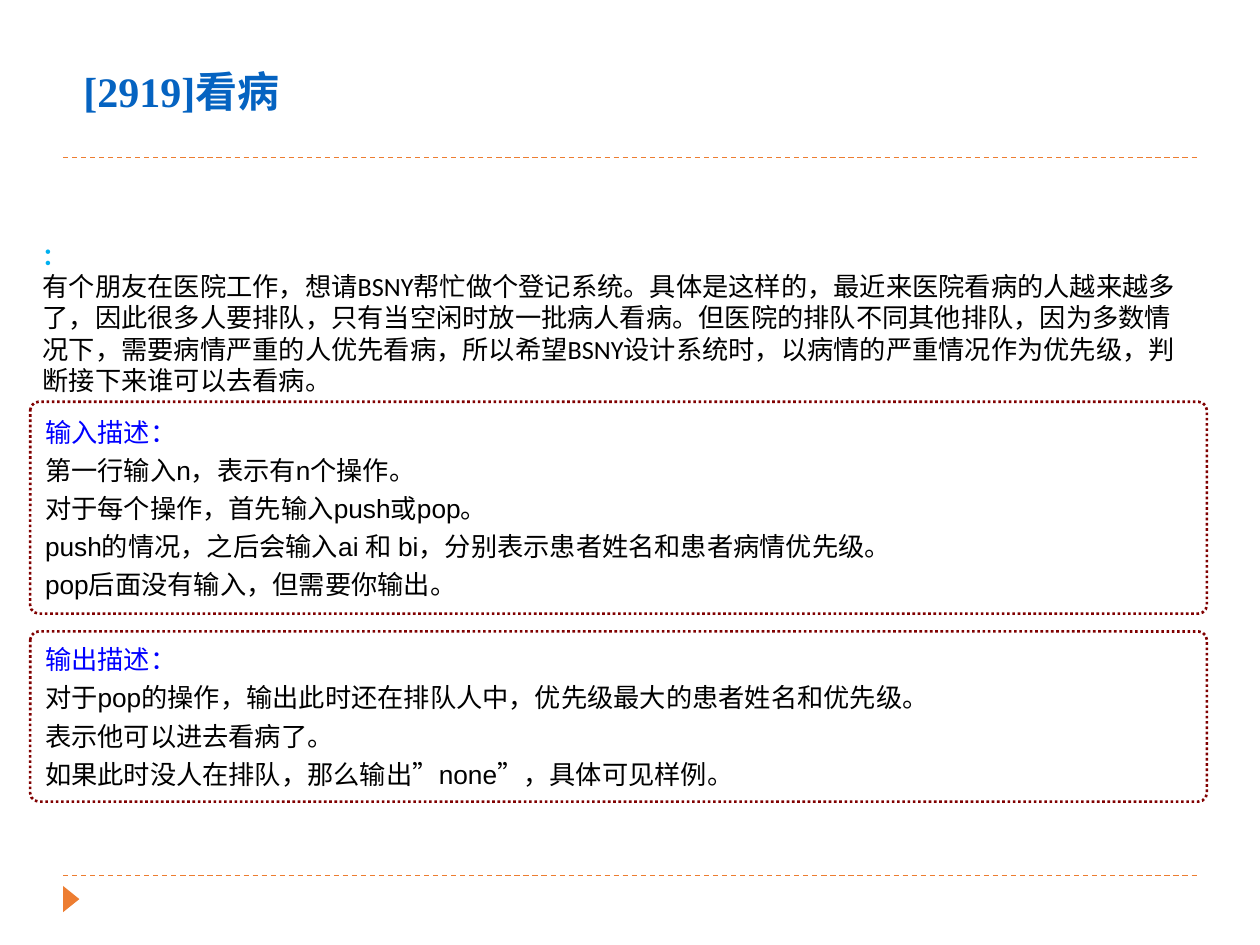
from dataclasses import dataclass

from lxml import etree
from pptx import Presentation
from pptx.dml.color import RGBColor
from pptx.enum import dml, shapes, text
from pptx.oxml import ns
from pptx.util import Cm, Pt


@dataclass(frozen=True)
class Theme:
    accent: str = "ED7D31"
    title: str = "0563C1"
    marker: str = "00B0F0"
    heading: str = "0000FF"
    ink: str = "000000"
    border: str = "800000"
    paper: str = "FFFFFF"
    title_size: float = 24
    body_size: float = 15
    marker_size: float = 13.5
    gap: float = 3.75


class Deck:
    """Draws the elements of the slide in one theme."""

    def __init__(self, prs, theme):
        self.theme = theme
        self.s = prs.slides.add_slide(prs.slide_layouts[6])

    def rule(self, y):
        line = self.s.shapes.add_connector(
            shapes.MSO_CONNECTOR.STRAIGHT, Cm(1.27), Cm(y), Cm(24.13), Cm(y))
        line.line.color.rgb = RGBColor.from_string(self.theme.accent)
        line.line.width = Pt(0.75)
        line.line.dash_style = dml.MSO_LINE.DASH
        etree.SubElement(line._element.spPr, ns.qn("a:effectLst"))

    def arrow(self, x, y, w, h):
        sp = self.s.shapes.add_shape(
            shapes.MSO_SHAPE.ISOSCELES_TRIANGLE, Cm(x), Cm(y), Cm(w), Cm(h))
        sp.rotation = 90
        sp.shadow.inherit = False
        sp.fill.solid()
        sp.fill.fore_color.rgb = RGBColor.from_string(self.theme.accent)
        sp.line.fill.background()

    def set_lines(self, sp, lines, font, gap=0):
        tf = sp.text_frame
        tf.word_wrap = True
        tf.text = "\n".join(line for line, *_ in lines)
        for p, (_, size, color, bold) in zip(tf.paragraphs, lines):
            p.alignment = text.PP_ALIGN.LEFT
            p.space_after = Pt(gap)
            for r in p.runs:
                r.font.name = font
                r.font.size = Pt(size)
                r.font.bold = bold
                r.font.color.rgb = RGBColor.from_string(color)

    def label(self, x, y, w, h, lines, font):
        sp = self.s.shapes.add_textbox(Cm(x), Cm(y), Cm(w), Cm(h))
        self.set_lines(sp, lines, font)

    def panel(self, y, h, heading, body):
        t = self.theme
        sp = self.s.shapes.add_shape(
            shapes.MSO_SHAPE.ROUNDED_RECTANGLE, Cm(0.61), Cm(y), Cm(23.72), Cm(h))
        sp.adjustments[0] = 0.17 / h
        sp.shadow.inherit = False
        sp.fill.solid()
        sp.fill.fore_color.rgb = RGBColor.from_string(t.paper)
        sp.line.color.rgb = RGBColor.from_string(t.border)
        sp.line.width = Pt(1.5)
        sp.line.dash_style = dml.MSO_LINE.ROUND_DOT
        sp.text_frame.vertical_anchor = text.MSO_ANCHOR.MIDDLE
        lines = [(heading, t.body_size, t.heading, False)]
        lines += [(line, t.body_size, t.ink, False) for line in body]
        self.set_lines(sp, lines, "Arial", t.gap)


prs = Presentation()
prs.slide_width, prs.slide_height = Cm(25.4), Cm(19.05)
theme = Theme()
deck = Deck(prs, theme)

for y in (17.65, 3.17):
    deck.rule(y)
deck.arrow(1.17, 17.96, 0.53, 0.33)

deck.label(0.61, 4.75, 23.72, 3.4, [
    ("：", theme.marker_size, theme.marker, True),
    ("有个朋友在医院工作，想请BSNY帮忙做个登记系统。具体是这样的，"
     "最近来医院看病的人越来越多了，因此很多人要排队，只有当空闲时放一批病人看病。"
     "但医院的排队不同其他排队，因为多数情况下，需要病情严重的人优先看病，"
     "所以希望BSNY设计系统时，以病情的严重情况作为优先级，判断接下来谁可以去看病。",
     theme.body_size, theme.ink, False),
], "Calibri")
deck.label(1.22, 1.19, 11.51, 1.27,
           [(" [2919]看病", theme.title_size, theme.title, True)], "Times New Roman")

deck.panel(8.1, 4.27, "输入描述：", [
    "第一行输入n，表示有n个操作。",
    "对于每个操作，首先输入push或pop。",
    "push的情况，之后会输入ai 和 bi，分别表示患者姓名和患者病情优先级。",
    "pop后面没有输入，但需要你输出。",
])
deck.panel(12.73, 3.43, "输出描述：", [
    "对于pop的操作，输出此时还在排队人中，优先级最大的患者姓名和优先级。",
    "表示他可以进去看病了。",
    "如果此时没人在排队，那么输出”none”，具体可见样例。",
])

prs.save("out.pptx")
